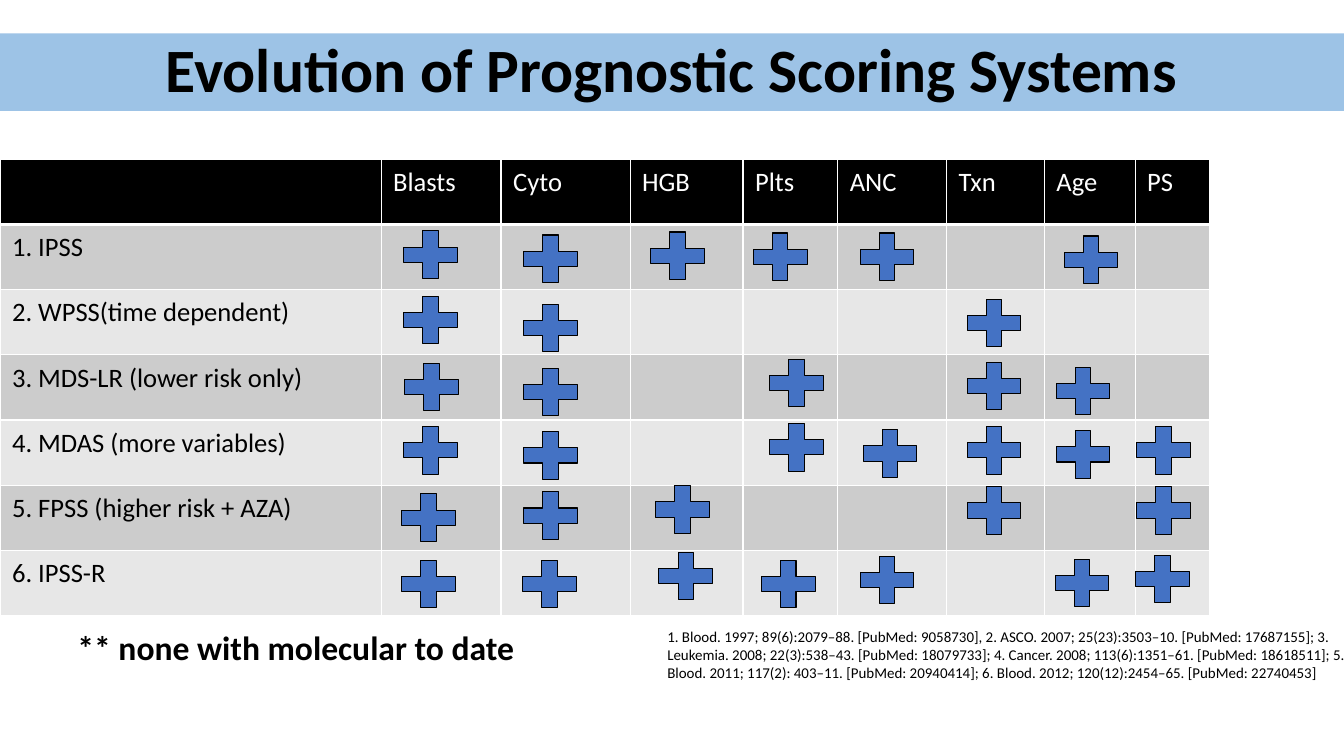
from itertools import accumulate

from lxml.etree import SubElement
from pptx import Presentation
from pptx.dml.color import RGBColor
from pptx.enum.shapes import MSO_SHAPE
from pptx.enum.text import MSO_ANCHOR, MSO_AUTO_SIZE, PP_ALIGN
from pptx.oxml.ns import qn
from pptx.util import Inches, Pt

FONT = "Calibri"
COLUMN_WIDTHS = [3.78, 1.19, 1.28, 1.12, 0.94, 1.08, 0.97, 0.9, 0.74]
ROW_HEIGHT = 4.53 / 7
PLUS_WIDTH, PLUS_HEIGHT = 0.72, 0.64

SYSTEMS = [
    "1. IPSS",
    "2. WPSS(time dependent)",
    "3. MDS-LR (lower risk only)",
    "4. MDAS (more variables)",
    "5. FPSS (higher risk + AZA)",
    "6. IPSS-R",
]

FACTOR_MARKS = {
    "Blasts": {1: (0.13, -0.02), 2: (0.13, -0.02), 3: (0.14, 0),
               4: (0.13, -0.02), 5: (0.11, 0), 6: (0.11, 0.01)},
    "Cyto": {1: (0.13, 0.02), 2: (0.13, 0.06), 3: (0.13, 0.05),
             4: (0.13, 0.03), 5: (0.13, -0.02), 6: (0.12, 0.01)},
    "HGB": {1: (0.11, -0.01), 5: (0.16, -0.08), 6: (0.19, -0.07)},
    "Plts": {1: (0.01, 0), 3: (0.17, -0.04), 4: (0.17, -0.05), 6: (0.09, 0.01)},
    "ANC": {1: (0.13, 0), 4: (0.16, 0.01), 6: (0.13, -0.03)},
    "Txn": {2: (0.11, 0.01), 3: (0.11, -0.01), 4: (0.11, -0.02), 5: (0.11, -0.07)},
    "Age": {1: (0.1, 0.03), 3: (0.02, 0.04), 4: (0.02, 0.02), 6: (0.01, 0)},
    "PS": {4: (-0.08, -0.02), 5: (-0.08, -0.07), 6: (-0.09, -0.04)},
}

REFERENCES = (
    "1. Blood. 1997; 89(6):2079–88. [PubMed: 9058730], "
    "2. ASCO. 2007; 25(23):3503–10. [PubMed: 17687155]; "
    "3. Leukemia. 2008; 22(3):538–43. [PubMed: 18079733]; "
    "4. Cancer. 2008; 113(6):1351–61. [PubMed: 18618511]; "
    "5. Blood. 2011; 117(2): 403–11. [PubMed: 20940414]; "
    "6. Blood. 2012; 120(12):2454–65. [PubMed: 22740453]"
)


def paint(target, color):
    if hasattr(target, "solid"):
        target.solid()
        target = target.fore_color
    target.rgb = RGBColor.from_string(color)


def write(frame, text, size, color="000000", bold=False, align=None, spacing=None):
    para = frame.paragraphs[0]
    para.alignment = align
    para.line_spacing = spacing
    span = para.add_run()
    span.text = text
    span.font.name = FONT
    span.font.size = Pt(size)
    span.font.bold = bold
    paint(span.font.color, color)


def place(shape, box):
    shape.left, shape.top, shape.width, shape.height = map(Inches, box)


def add_title(page, box):
    title = page.shapes.title
    place(title, box)
    paint(title.fill, "9DC3E6")
    frame = title.text_frame
    frame.auto_size = MSO_AUTO_SIZE.NONE
    frame.vertical_anchor = MSO_ANCHOR.MIDDLE
    write(frame, "Evolution of Prognostic Scoring Systems", 44, bold=True,
          align=PP_ALIGN.CENTER, spacing=0.9)


def set_borders(cell, bottom):
    properties = cell._tc.get_or_add_tcPr()
    for side, width in (("lnL", 1), ("lnR", 1), ("lnT", 1), ("lnB", bottom)):
        line = SubElement(properties, qn(f"a:{side}"), w=str(Pt(width)))
        fill = SubElement(line, qn("a:solidFill"))
        SubElement(fill, qn("a:srgbClr"), val="FFFFFF")


def format_cell(cell, text, row):
    header = row == 0
    set_borders(cell, 3 if header else 1)
    paint(cell.fill, "000000" if header else ("E7E7E7", "CCCCCC")[row % 2])
    cell.margin_left = cell.margin_right = Inches(0.12)
    cell.margin_top = cell.margin_bottom = Inches(0.07)
    if text:
        write(cell.text_frame, text, 19, "FFFFFF" if header else "000000")


def add_factor_table(page, box):
    rows = [["", *FACTOR_MARKS]]
    rows += [[system] + [""] * len(FACTOR_MARKS) for system in SYSTEMS]
    table = page.shapes.add_table(
        len(rows), len(COLUMN_WIDTHS), *map(Inches, box)).table
    for column, width in zip(table.columns, COLUMN_WIDTHS):
        column.width = Inches(width)
    for row, texts in enumerate(rows):
        table.rows[row].height = Inches(ROW_HEIGHT)
        for column, text in enumerate(texts):
            format_cell(table.cell(row, column), text, row)


def add_plus(page, left, top):
    plus = page.shapes.add_shape(
        MSO_SHAPE.MATH_PLUS, *map(Inches, (left, top, PLUS_WIDTH, PLUS_HEIGHT)))
    plus.shadow.inherit = False
    paint(plus.fill, "4472C4")
    paint(plus.line.fill, "000000")
    plus.line.width = Pt(0.75)


def add_factor_marks(page, box):
    left, top = box[:2]
    for column, marks in zip(accumulate(COLUMN_WIDTHS), FACTOR_MARKS.values()):
        for row, (right_shift, down_shift) in marks.items():
            add_plus(page, left + column + right_shift,
                     top + row * ROW_HEIGHT + down_shift)


def add_note(page, box, text, size, bold=False):
    frame = page.shapes.add_textbox(*map(Inches, box)).text_frame
    frame.word_wrap = True
    frame.auto_size = MSO_AUTO_SIZE.SHAPE_TO_FIT_TEXT
    write(frame, text, size, bold=bold)


def main():
    deck = Presentation()
    deck.slide_width, deck.slide_height = Inches(13.33), Inches(7.5)
    page = deck.slides.add_slide(deck.slide_layouts[5])
    table_box = (0, 1.58, sum(COLUMN_WIDTHS), 7 * ROW_HEIGHT)
    add_title(page, (0, 0.33, 13.33, 0.77))
    add_factor_table(page, table_box)
    add_note(page, (6.52, 6.18, 7.09, 0.64), REFERENCES, 10.7)
    add_factor_marks(page, table_box)
    add_note(page, (0.67, 6.17, 10.8, 0.5), "** none with molecular to date", 24, bold=True)
    deck.save("out.pptx")


if __name__ == "__main__":
    main()
